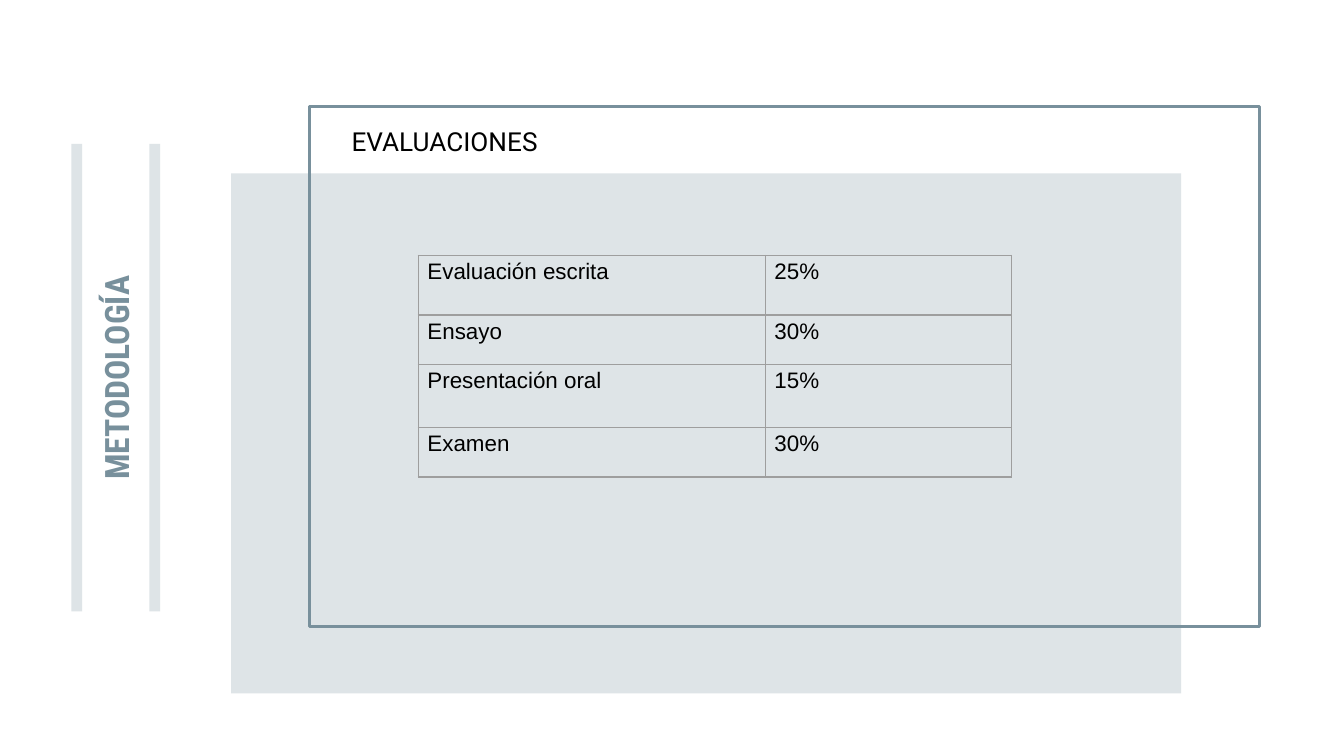
from lxml import etree
from pptx import Presentation
from pptx.dml.color import RGBColor
from pptx.enum.shapes import MSO_SHAPE
from pptx.enum.text import MSO_ANCHOR, MSO_AUTO_SIZE, PP_ALIGN
from pptx.oxml import parse_xml
from pptx.oxml.ns import nsdecls, qn
from pptx.util import Pt

RECTANGLE = MSO_SHAPE.RECTANGLE
TOP, BOTTOM = MSO_ANCHOR.TOP, MSO_ANCHOR.BOTTOM
CENTER, RIGHT, JUSTIFY = PP_ALIGN.CENTER, PP_ALIGN.RIGHT, PP_ALIGN.JUSTIFY
NO_AUTOFIT = MSO_AUTO_SIZE.NONE
TITLE_ONLY_LAYOUT = 5

SLATE = "78909C"
BLACK = "000000"
GREY = "9E9E9E"

PANEL_SIZE = (509, 278.6)
BAR_SIZE = (250.6, 5.8)
BAR_LEFTS = (-84.2, -42.4)
BAR_TOP = 199.4
COLUMN_WIDTHS = (185.9, 131.8)
ROW_HEIGHTS = (32, 26.6, 33.6, 26.6)
EVALUATIONS = (
    ("Evaluación escrita", "25%"),
    ("Ensayo", "30%"),
    ("Presentación oral", "15%"),
    ("Examen", "30%"),
)


def color(hex_value):
    return RGBColor.from_string(hex_value)


def write_text(frame, text, size, font, fill=BLACK, bold=False, align=CENTER,
               line_spacing=None, space_after=None):
    paragraph = frame.paragraphs[0]
    paragraph.alignment = align
    paragraph.line_spacing = line_spacing
    if space_after is not None:
        paragraph.space_after = Pt(space_after)
    run = paragraph.add_run()
    run.text = text
    run.font.size = Pt(size)
    run.font.name = font
    run.font.bold = bold
    run.font.color.rgb = color(fill)


def format_frame(frame, anchor):
    frame.word_wrap = True
    frame.auto_size = NO_AUTOFIT
    frame.vertical_anchor = anchor
    frame.margin_left = frame.margin_right = Pt(7.2)
    frame.margin_top = frame.margin_bottom = Pt(7.2)


def place(shape, left, top, width, height):
    shape.left, shape.top = Pt(left), Pt(top)
    shape.width, shape.height = Pt(width), Pt(height)


def add_rectangle(slide, left, top, size, rotation=0):
    shape = slide.shapes.add_shape(RECTANGLE, Pt(left), Pt(top), *map(Pt, size))
    shape.shadow.inherit = False
    shape.rotation = rotation
    return shape


def add_outline(slide, left, top, size):
    shape = add_rectangle(slide, left, top, size)
    shape.fill.background()
    shape.line.color.rgb = color(SLATE)
    shape.line.width = Pt(1.5)


def add_tint(slide, left, top, size, rotation=0):
    shape = add_rectangle(slide, left, top, size, rotation)
    shape.line.fill.background()
    shape.fill.solid()
    shape.fill.fore_color.rgb = color(SLATE)
    fill_color = shape.fill._xPr.find(qn("a:solidFill"))[0]
    etree.SubElement(fill_color, qn("a:alpha"), val="24000")


def set_title(slide, text):
    title = slide.shapes.title
    place(title, -166.3, 173.5, 434.9, 57.6)
    title.rotation = 270
    format_frame(title.text_frame, BOTTOM)
    write_text(title.text_frame, text, 18, "Roboto Condensed", fill=SLATE, bold=True)


def add_heading(slide, text):
    box = slide.shapes.add_textbox(Pt(146.2), Pt(59.8), Pt(149), Pt(28.8))
    format_frame(box.text_frame, TOP)
    write_text(box.text_frame, text, 14, "Roboto", align=RIGHT)


def set_borders(cell):
    properties = cell._tc.get_or_add_tcPr()
    for index, side in enumerate(("lnL", "lnR", "lnT", "lnB")):
        properties.insert(index, parse_xml(
            f'<a:{side} {nsdecls("a")} w="{Pt(0.75)}"><a:solidFill>'
            f'<a:srgbClr val="{GREY}"/></a:solidFill></a:{side}>'))


def format_cell(cell, text):
    cell.fill.background()
    cell.vertical_anchor = TOP
    cell.margin_left = cell.margin_right = Pt(5)
    cell.margin_top = cell.margin_bottom = Pt(0)
    write_text(cell.text_frame, text, 12, "Arial", align=JUSTIFY,
               line_spacing=1.15, space_after=8)
    set_borders(cell)


def add_evaluation_table(slide):
    table = slide.shapes.add_table(
        len(EVALUATIONS), len(COLUMN_WIDTHS), Pt(224), Pt(136.8),
        Pt(sum(COLUMN_WIDTHS)), Pt(sum(ROW_HEIGHTS))).table
    table.first_row = False
    table.horz_banding = False
    for column, width in zip(table.columns, COLUMN_WIDTHS):
        column.width = Pt(width)
    for row, height, texts in zip(table.rows, ROW_HEIGHTS, EVALUATIONS):
        row.height = Pt(height)
        for cell, text in zip(row.cells, texts):
            format_cell(cell, text)


def main():
    presentation = Presentation()
    presentation.slide_width = Pt(720)
    presentation.slide_height = Pt(405)
    slide = presentation.slides.add_slide(presentation.slide_layouts[TITLE_ONLY_LAYOUT])
    add_outline(slide, 165.8, 57, PANEL_SIZE)
    add_tint(slide, 123.8, 92.9, PANEL_SIZE)
    set_title(slide, "METODOLOGÍA")
    for left in BAR_LEFTS:
        add_tint(slide, left, BAR_TOP, BAR_SIZE, rotation=270)
    add_heading(slide, "EVALUACIONES")
    add_evaluation_table(slide)
    presentation.save("out.pptx")


if __name__ == "__main__":
    main()
